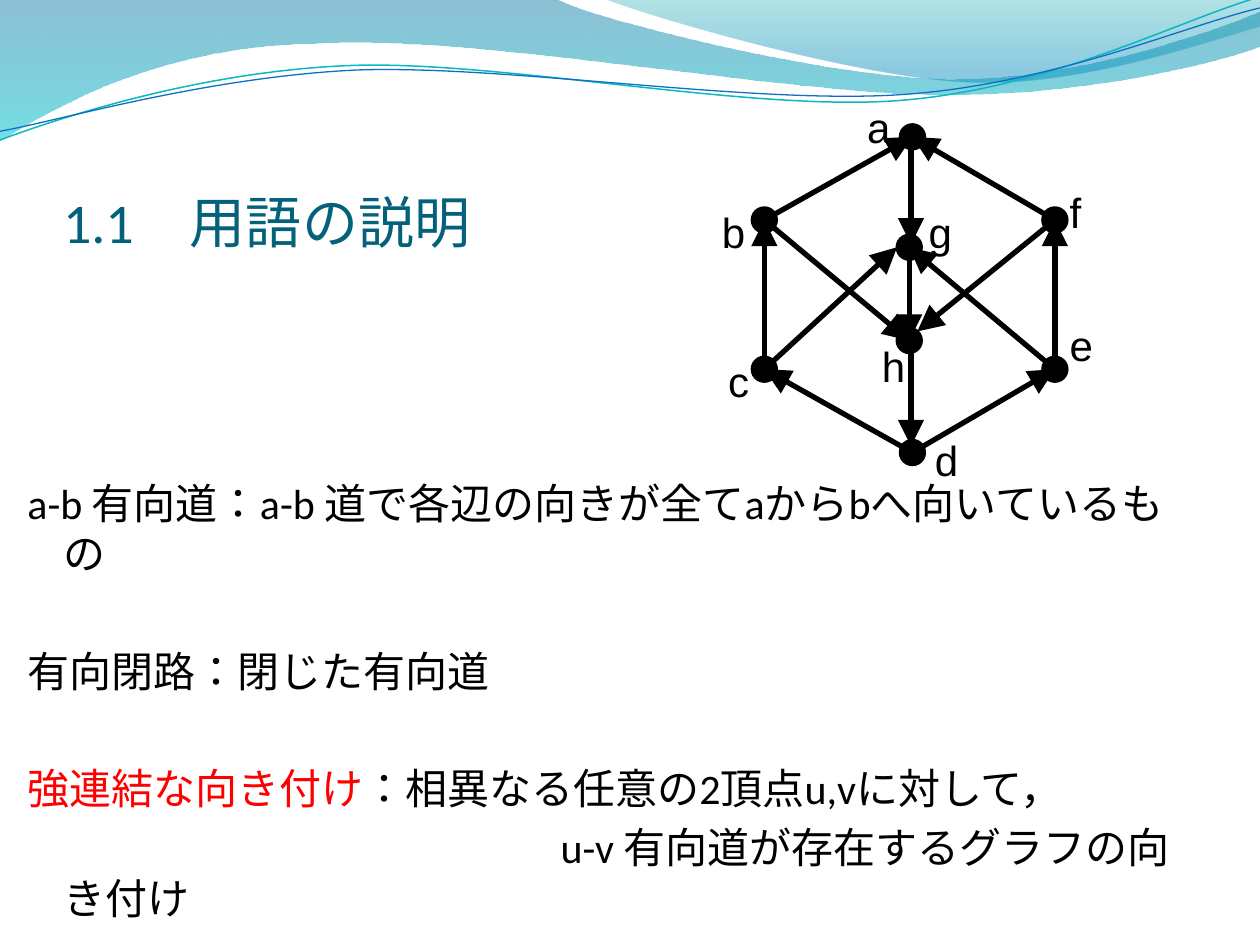
from dataclasses import dataclass
from typing import NamedTuple

from lxml.etree import Element, SubElement
from pptx import Presentation
from pptx.dml.color import RGBColor
from pptx.enum.lang import MSO_LANGUAGE_ID
from pptx.enum.shapes import MSO_CONNECTOR, MSO_SHAPE
from pptx.enum.text import MSO_ANCHOR, MSO_AUTO_SIZE, PP_ALIGN
from pptx.oxml.ns import qn
from pptx.util import Pt


@dataclass(frozen=True)
class Theme:
    ink: str = "000000"
    title: str = "04617B"
    key: str = "FF0000"
    sans: str = "Calibri"
    label: str = "Arial"
    head: int = 32
    body: int = 24


class Stop(NamedTuple):
    pos: float
    color: str
    alpha: int


class Wave(NamedTuple):
    """Steps of two numbers are lines, steps of six are Bezier curves."""
    start: tuple
    steps: list
    stops: tuple = ()
    color: str = ""
    width: float = 0


class Node(NamedTuple):
    x: float
    y: float
    left: float
    top: float
    wide: float = 28


class Edge(NamedTuple):
    """An arrow between nodes; sx shifts its tail, dx and dy its tip."""
    tail: str
    tip: str
    dx: float = 0
    dy: float = 0
    sx: float = 0


class Para(NamedTuple):
    runs: list
    before: float
    indent: float = -20.6


THEME = Theme()
DOT = 13.6
MARGIN = 20.6
GAP, BREAK = 4.8, 38.4

WAVES = [
    Wave((0, -1), [(317, -1), (343, 12, 478, 45, 546, 45),
                   (614, 45, 690, 19, 720, 6.5), (721, 26),
                   (708, 32, 626, 55, 537, 54), (448, 54, 275, 20, 185, 24.5),
                   (93, 25, 33, 60, -1, 81)],
         (Stop(0, "0074A1", 45), Stop(1, "00C6CF", 55))),
    Wave((345, -1), [(366, 8, 491, 45, 554, 47),
                     (616, 50, 692, 23, 720, 15), (720, 0)],
         (Stop(0, "00A1A9", 30), Stop(0.8, "008BBF", 45))),
    Wave((0, 80), [(35, 67, 114, 41, 199, 37.5), (284, 34, 427, 64, 513, 57.5),
                   (600, 51, 675, 11, 719, -1.5)], color="0AB8BF", width=0.85),
    Wave((0, 75), [(34, 69, 118, 44, 204, 40), (290, 37, 430, 60, 516, 54),
                   (602, 48, 676, 15, 720, 4.5)], color="0F6FC6", width=0.75),
]

NODES = {
    "a": Node(521.4, 78.2, 488.4, 54.7),
    "b": Node(436.8, 125.7, 405.4, 114.5),
    "c": Node(436.8, 211, 409, 199.4, 26.6),
    "d": Node(521.4, 258.6, 527.2, 244.8),
    "e": Node(602.8, 211, 604.2, 179.3),
    "f": Node(602.8, 125.7, 604.2, 103, 21.6),
    "g": Node(519.6, 141.3, 523.6, 114.5),
    "h": Node(519.6, 194.6, 496.8, 190.8),
}

EDGES = [Edge(*pair) for pair in ("ba", "fa", "cb", "dc", "de", "ef",
                                  "gh", "eg", "bh")]
EDGES += [Edge("c", "g", -7, 0), Edge("f", "h", 4.6, -5.2),
          Edge("a", "g", 1, -1.6, -0.8), Edge("h", "d", -0.8, -3.7, 1)]

PARAS = [
    Para([("a-b 有向道：a-b 道で各辺の向きが全てaからbへ向いているもの", THEME.ink)], 0),
    Para([("有向閉路：閉じた有向道", THEME.ink)], BREAK),
    Para([("強連結な向き付け", THEME.key),
          ("：相異なる任意の2頂点u,vに対して，", THEME.ink)], BREAK),
    Para([("u-v 有向道が存在するグラフの向き付け", THEME.ink)], GAP, 284),
]


def rgb(color: str) -> RGBColor:
    return RGBColor.from_string(color)


def write(para, text: str, *, size=THEME.body, font=THEME.sans, color=THEME.ink):
    run = para.add_run()
    run.text = text
    run.font.size = Pt(size)
    run.font.name = font
    run.font.color.rgb = rgb(color)
    run.font.language_id = MSO_LANGUAGE_ID.JAPANESE


def bend(shape, steps: list) -> None:
    """Join the three line segments of each curved step into one Bezier."""
    lines = iter(list(shape.element.iter(qn("a:lnTo"))))
    for step in steps:
        group = [next(lines) for _ in range(len(step) // 2)]
        if len(group) == 3:
            curve = Element(qn("a:cubicBezTo"))
            group[0].addprevious(curve)
            for line in group:
                curve.append(line[0])
                line.getparent().remove(line)


def draw_wave(slide, wave: Wave) -> None:
    pen = slide.shapes.build_freeform(*map(Pt, wave.start), scale=1.0)
    for step in wave.steps:
        pen.add_line_segments([(Pt(x), Pt(y)) for x, y in
                               zip(step[::2], step[1::2])], close=False)
    if wave.stops:
        pen.add_line_segments([], close=True)
    shape = pen.convert_to_shape()
    bend(shape, wave.steps)
    shape.shadow.inherit = False
    if not wave.stops:
        shape.fill.background()
        shape.line.color.rgb = rgb(wave.color)
        shape.line.width = Pt(wave.width)
        return
    shape.line.fill.background()
    shape.fill.gradient()
    shape.fill.gradient_angle = 270
    for stop, spec in zip(shape.fill.gradient_stops, wave.stops):
        stop.position = spec.pos
        stop.color.rgb = rgb(spec.color)
    for tint, spec in zip(shape.element.iter(qn("a:srgbClr")), wave.stops):
        SubElement(tint, qn("a:alpha"), val=str(spec.alpha * 1000))


def draw_edge(slide, edge: Edge) -> None:
    tail, tip = NODES[edge.tail], NODES[edge.tip]
    line = slide.shapes.add_connector(
        MSO_CONNECTOR.STRAIGHT, Pt(tail.x + edge.sx), Pt(tail.y),
        Pt(tip.x + edge.dx), Pt(tip.y + edge.dy))
    line.line.color.rgb = rgb(THEME.ink)
    line.line.width = Pt(3)
    SubElement(line.line._get_or_add_ln(), qn("a:tailEnd"),
               type="triangle", w="lg", len="lg")
    SubElement(line.element.spPr, qn("a:effectLst"))


def draw_node(slide, name: str, node: Node) -> None:
    dot = slide.shapes.add_shape(MSO_SHAPE.OVAL, Pt(node.x - DOT / 2),
                                 Pt(node.y - DOT / 2), Pt(DOT), Pt(DOT))
    dot.shadow.inherit = False
    dot.fill.solid()
    dot.fill.fore_color.rgb = dot.line.color.rgb = rgb(THEME.ink)
    dot.line.width = Pt(2)
    box = slide.shapes.add_textbox(Pt(node.left), Pt(node.top), Pt(node.wide), Pt(36.5))
    box.text_frame.word_wrap = False
    box.text_frame.auto_size = MSO_AUTO_SIZE.SHAPE_TO_FIT_TEXT
    write(box.text_frame.paragraphs[0], name, font=THEME.label)


def draw_title(slide, text: str) -> None:
    title = slide.shapes.title
    title.left, title.top, title.width, title.height = map(Pt, (36, 55.4, 648, 90))
    frame = title.text_frame
    frame.margin_left = frame.margin_right = frame.margin_bottom = 0
    frame.margin_top = Pt(3.6)
    frame.vertical_anchor = MSO_ANCHOR.BOTTOM
    frame.paragraphs[0].alignment = PP_ALIGN.LEFT
    write(frame.paragraphs[0], text, size=THEME.head, color=THEME.title)


def draw_body(slide) -> None:
    frame = slide.shapes.add_textbox(Pt(8.6), Pt(269.2), Pt(671), Pt(266)).text_frame
    frame.word_wrap = True
    for i, item in enumerate(PARAS):
        para = frame.add_paragraph() if i else frame.paragraphs[0]
        para.space_before = Pt(item.before)
        props = para._p.get_or_add_pPr()
        props.set("marL", str(Pt(MARGIN)))
        props.set("indent", str(Pt(item.indent)))
        for text, color in item.runs:
            write(para, text, color=color)


def main() -> None:
    deck = Presentation()
    deck.slide_width, deck.slide_height = Pt(720), Pt(540)
    slide = deck.slides.add_slide(deck.slide_layouts[5])
    for wave in WAVES:
        draw_wave(slide, wave)
    draw_title(slide, "1.1　用語の説明")
    draw_body(slide)
    for edge in EDGES:
        draw_edge(slide, edge)
    for name, node in NODES.items():
        draw_node(slide, name, node)
    deck.save("out.pptx")


if __name__ == "__main__":
    main()
